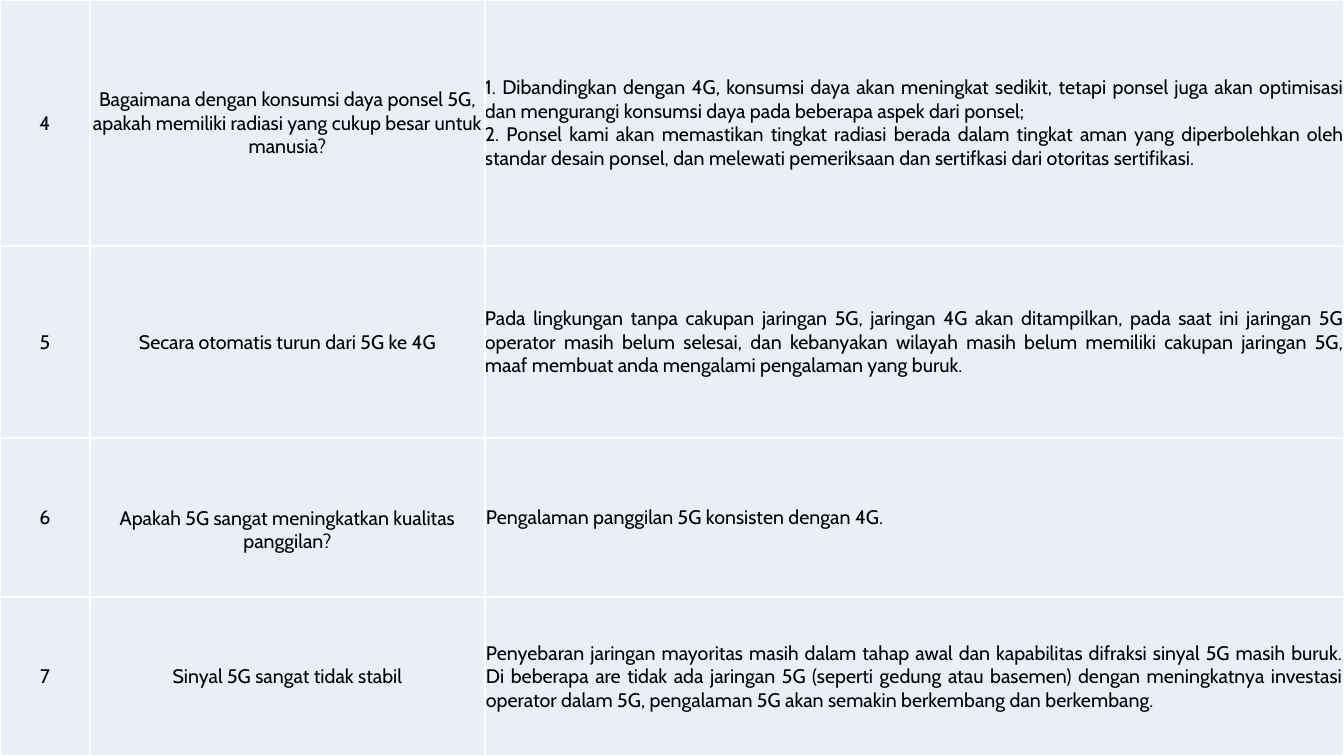
from dataclasses import dataclass

import pptx
import pptx.dml.color
import pptx.enum.text
import pptx.oxml
import pptx.oxml.ns
import pptx.util

EMU = 914400 / 100.8  # one px
WIDE, HIGH = 1344, 756
COLS = [90, 395, 859]
FONT, SIZE = "Cabin", 14
INK, FILL, LINE = "000000", "EAEFF7", "FFFFFF"
MID = pptx.enum.text.PP_ALIGN.CENTER
JUST = pptx.enum.text.PP_ALIGN.JUSTIFY


@dataclass
class Faq:
    num: int
    ask: str
    reply: list[str]
    high: int
    pad: int = 0
    drop: int = 0  # extra space above the question


FAQS = [
    Faq(4, "Bagaimana dengan konsumsi daya ponsel 5G, apakah memiliki radiasi "
        "yang cukup besar untuk manusia?",
        ["1. Dibandingkan dengan 4G, konsumsi daya akan meningkat sedikit, tetapi "
         "ponsel juga akan optimisasi dan mengurangi konsumsi daya pada beberapa "
         "aspek dari ponsel;",
         "2. Ponsel kami akan memastikan tingkat radiasi berada dalam tingkat aman "
         "yang diperbolehkan oleh standar desain ponsel, dan melewati pemeriksaan "
         "dan sertifkasi dari otoritas sertifikasi."], 246),
    Faq(5, "Secara otomatis turun dari 5G ke 4G",
        ["Pada lingkungan tanpa cakupan jaringan 5G, jaringan 4G akan ditampilkan, "
         "pada saat ini jaringan 5G operator masih belum selesai, dan kebanyakan "
         "wilayah masih belum memiliki cakupan jaringan 5G, maaf membuat anda "
         "mengalami pengalaman yang buruk."], 192),
    Faq(6, "Apakah 5G sangat meningkatkan kualitas panggilan?",
        ["Pengalaman panggilan 5G konsisten dengan 4G."], 159, pad=1, drop=24),
    Faq(7, "Sinyal 5G sangat tidak stabil",
        ["Penyebaran jaringan mayoritas masih dalam tahap awal dan kapabilitas "
         "difraksi sinyal 5G masih buruk. Di beberapa are tidak ada jaringan 5G "
         "(seperti gedung atau basemen) dengan meningkatnya investasi operator "
         "dalam 5G, pengalaman 5G akan semakin berkembang dan berkembang."],
        159, pad=1),
]


def px(num: int) -> int:
    return pptx.util.Emu(round(num * EMU))


def tint(code: str) -> pptx.dml.color.RGBColor:
    return pptx.dml.color.RGBColor.from_string(code)


def edge(cell, code: str = LINE, width: int = 1) -> None:
    """Draw the four cell borders; they come before the fill in the XML."""
    props = cell._tc.get_or_add_tcPr()
    for spot, side in enumerate("LRTB"):
        props.insert(spot, pptx.oxml.parse_xml(
            f'<a:ln{side} {pptx.oxml.ns.nsdecls("a")} w="{pptx.util.Pt(width)}">'
            f'<a:solidFill><a:srgbClr val="{code}"/></a:solidFill></a:ln{side}>'))


def write(cell, lines: list[str], *, align=MID, pad: int = 0, drop: int = 0) -> None:
    cell.fill.solid()
    cell.fill.fore_color.rgb = tint(FILL)
    edge(cell)
    cell.vertical_anchor = pptx.enum.text.MSO_ANCHOR.MIDDLE
    cell.margin_left = cell.margin_right = px(pad)
    cell.margin_top, cell.margin_bottom = px(pad + drop), 0
    cell.text_frame.text = "\n".join(lines)
    for para in cell.text_frame.paragraphs:
        para.alignment = align
        for run in para.runs:
            run.font.name = FONT
            run.font.size = pptx.util.Pt(SIZE)
            run.font.color.rgb = tint(INK)


def main() -> None:
    deck = pptx.Presentation()
    deck.slide_width, deck.slide_height = px(WIDE), px(HIGH)
    slide = deck.slides.add_slide(deck.slide_layouts[6])
    slide.background.fill.solid()
    slide.background.fill.fore_color.rgb = tint("000000")

    # Table of questions and answers over the whole slide
    frame = slide.shapes.add_table(len(FAQS), len(COLS), 0, 0, px(WIDE), px(HIGH))
    table = frame.table
    table.first_row = table.horz_banding = False
    for col, wide in zip(table.columns, COLS):
        col.width = px(wide)
    for row, faq in zip(table.rows, FAQS):
        row.height = px(faq.high)
        num, ask, reply = row.cells
        write(num, [str(faq.num)], pad=1)
        write(ask, [faq.ask], pad=faq.pad, drop=faq.drop)
        write(reply, faq.reply, align=JUST, pad=faq.pad)

    deck.save("out.pptx")


if __name__ == "__main__":
    main()
